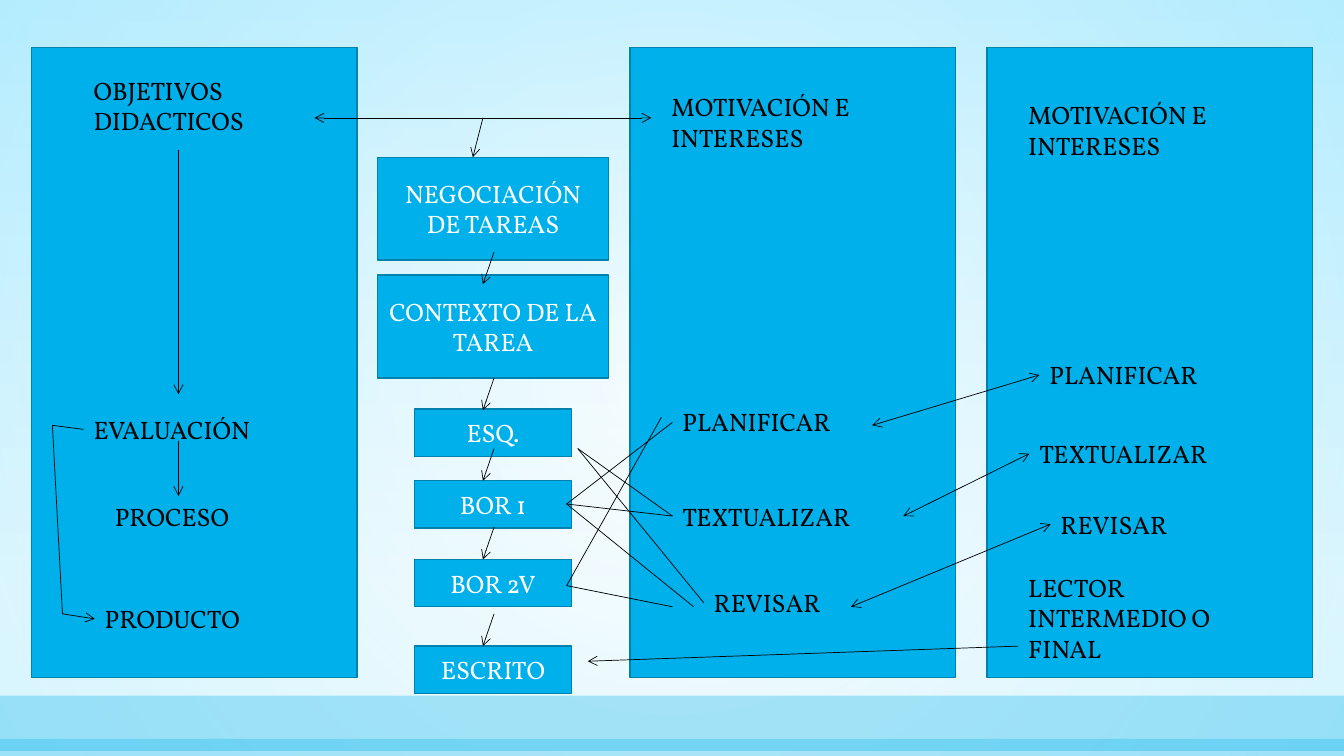
from lxml.etree import SubElement
from pptx import Presentation
from pptx.dml.color import RGBColor
from pptx.enum.shapes import MSO_CONNECTOR, MSO_SHAPE
from pptx.enum.text import MSO_ANCHOR, MSO_AUTO_SIZE, PP_ALIGN
from pptx.oxml import parse_xml
from pptx.oxml.ns import nsdecls, qn
from pptx.util import Inches, Pt

FONT = "Vollkorn"
COLORS = {"panel": "00B0EA", "border": "0082AD", "sky": "C8F1FF",
          "glow": "91E4FF", "white": "FFFFFF", "black": "000000"}
WIDTH, HEIGHT = 13.33, 7.5

BANDS = [(6.9, 0.55, 30), (7.33, 0.17, 28)]
COLUMNS = [0.31, 6.25, 9.79]
COLUMN_TOP, COLUMN_WIDTH, COLUMN_HEIGHT = 0.47, 3.23, 6.25

TASK_CENTER = 4.89
LARGE, SMALL = (2.29, 1.02), (1.56, 0.47)
TASKS = [
    ("NEGOCIACIÓN DE TAREAS", 1.56, LARGE),
    ("CONTEXTO DE LA TAREA", 2.73, LARGE),
    ("ESQ.", 4.06, SMALL),
    ("BOR 1", 4.77, SMALL),
    ("BOR 2V", 5.55, SMALL),
    ("ESCRITO", 6.41, SMALL),
]

LABELS = [
    ("OBJETIVOS DIDACTICOS", 0.83, 0.7, 2.08, 0.71),
    ("EVALUACIÓN", 0.83, 4.06, 2.19, 0.4),
    ("PROCESO", 1.04, 4.92, 1.77, 0.4),
    ("PRODUCTO", 0.94, 5.94, 1.98, 0.4),
    ("MOTIVACIÓN E INTERESES", 6.56, 0.86, 2.5, 0.71),
    ("PLANIFICAR", 6.67, 3.98, 2.4, 0.4),
    ("TEXTUALIZAR", 6.67, 4.92, 2.29, 0.4),
    ("REVISAR", 6.98, 5.78, 1.67, 0.4),
    ("PLANIFICAR", 10.31, 3.52, 2.4, 0.4),
    ("TEXTUALIZAR", 10.21, 4.3, 2.29, 0.4),
    ("REVISAR", 10.42, 5, 1.67, 0.4),
    ("LECTOR INTERMEDIO O FINAL", 10.1, 5.63, 2.6, 1.01),
    ("MOTIVACIÓN E INTERESES", 10.1, 0.94, 2.5, 0.71),
]

STEP_TOPS = [2.5, 3.75, 4.45, 5.23, 6.09]
STEP_DROP = 0.32
ARROWS = [
    ((1.77, 1.49), (1.77, 3.91)),
    ((1.77, 4.38), (1.77, 4.92)),
    ((0.62, 6.09), (0.94, 6.14)),
    ((4.79, 1.17), (4.69, 1.56)),
    ((10.1, 6.41), (5.83, 6.56)),
] + [((4.9, top), (4.79, top + STEP_DROP)) for top in STEP_TOPS]
DOUBLE_ARROWS = [
    ((3.12, 1.17), (6.46, 1.17)),
    ((8.65, 4.22), (10.31, 3.72)),
    ((8.96, 5.12), (10.21, 4.5)),
    ((8.44, 6.02), (10.42, 5.2)),
]
BRACKET = [(0.83, 4.26), (0.52, 4.22), (0.62, 6.09)]
FANS = {
    (5.73, 4.45): [(6.67, 5.12), (6.98, 5.98)],
    (5.62, 5): [(6.67, 4.19), (6.67, 5.12), (6.88, 6.02)],
    (5.62, 5.81): [(6.56, 4.14), (6.67, 6.02)],
}
PLAIN_LINES = list(zip(BRACKET, BRACKET[1:])) + [
    (start, end) for start, ends in FANS.items() for end in ends]


def color(name):
    return RGBColor.from_string(COLORS[name])


def set_gradient(fill, element, stops, direction):
    fill.gradient()
    stop_xml = "".join(
        f'<a:gs pos="{position * 1000}"><a:srgbClr val="{COLORS[name]}">'
        f'<a:alpha val="{alpha * 1000}"/></a:srgbClr></a:gs>'
        for position, name, alpha in stops)
    gradient = parse_xml(
        f'<a:gradFill {nsdecls("a")} rotWithShape="1">'
        f'<a:gsLst>{stop_xml}</a:gsLst>{direction}</a:gradFill>')
    previous = element.find(f'.//{qn("a:gradFill")}')
    previous.getparent().replace(previous, gradient)


def add_box(page, left, top, width, height, border=True):
    box = page.shapes.add_shape(MSO_SHAPE.RECTANGLE, Inches(left), Inches(top),
                                Inches(width), Inches(height))
    box.shadow.inherit = False
    box.fill.solid()
    box.fill.fore_color.rgb = color("panel")
    if border:
        box.line.color.rgb = color("border")
        box.line.width = Pt(1)
    else:
        box.line.fill.background()
    return box


def set_text(box, text, color_name, align):
    frame = box.text_frame
    frame.word_wrap = True
    frame.text = text
    para = frame.paragraphs[0]
    para.alignment = align
    for span in para.runs:
        span.font.name = FONT
        span.font.size = Pt(18)
        span.font.color.rgb = color(color_name)


def add_line(page, start, end, arrow_ends):
    line = page.shapes.add_connector(
        MSO_CONNECTOR.STRAIGHT, *(Inches(value) for value in start + end))
    line.line.color.rgb = color("black")
    line.line.width = Pt(0.5)
    properties = line.element.spPr
    outline = properties.find(qn("a:ln"))
    for arrow_end in arrow_ends:
        SubElement(outline, qn(f"a:{arrow_end}"), type="arrow")
    SubElement(properties, qn("a:effectLst"))


def add_backdrop(page):
    set_gradient(page.background.fill, page.element,
                 [(0, "sky", 100), (79, "white", 100), (100, "white", 100)],
                 '<a:lin ang="5400000" scaled="0"/>')
    glow = add_box(page, 0, 0, WIDTH, HEIGHT, border=False)
    set_gradient(glow.fill, glow.element,
                 [(0, "white", 49), (100, "glow", 35)],
                 '<a:path path="circle"><a:fillToRect l="50000" t="50000" '
                 'r="50000" b="50000"/></a:path>')
    for top, height, alpha in BANDS:
        band = add_box(page, 0, top, WIDTH, height, border=False)
        tint = band.element.spPr.find(f'{qn("a:solidFill")}/{qn("a:srgbClr")}')
        SubElement(tint, qn("a:alpha"), val=str(alpha * 1000))


def main():
    """Build the slide on planning and negotiating writing tasks."""
    deck = Presentation()
    deck.slide_width, deck.slide_height = Inches(WIDTH), Inches(HEIGHT)
    page = deck.slides.add_slide(deck.slide_layouts[6])
    add_backdrop(page)
    for left in COLUMNS:
        add_box(page, left, COLUMN_TOP, COLUMN_WIDTH, COLUMN_HEIGHT)
    for text, top, (width, height) in TASKS:
        box = add_box(page, TASK_CENTER - width / 2, top, width, height)
        box.text_frame.vertical_anchor = MSO_ANCHOR.MIDDLE
        set_text(box, text, "white", PP_ALIGN.CENTER)
    for text, *bounds in LABELS:
        label = page.shapes.add_textbox(*(Inches(value) for value in bounds))
        set_text(label, text, "black", PP_ALIGN.LEFT)
        label.text_frame.auto_size = MSO_AUTO_SIZE.SHAPE_TO_FIT_TEXT
    for lines, arrow_ends in [(PLAIN_LINES, []), (ARROWS, ["tailEnd"]),
                              (DOUBLE_ARROWS, ["headEnd", "tailEnd"])]:
        for start, end in lines:
            add_line(page, start, end, arrow_ends)
    deck.save("out.pptx")


if __name__ == "__main__":
    main()
